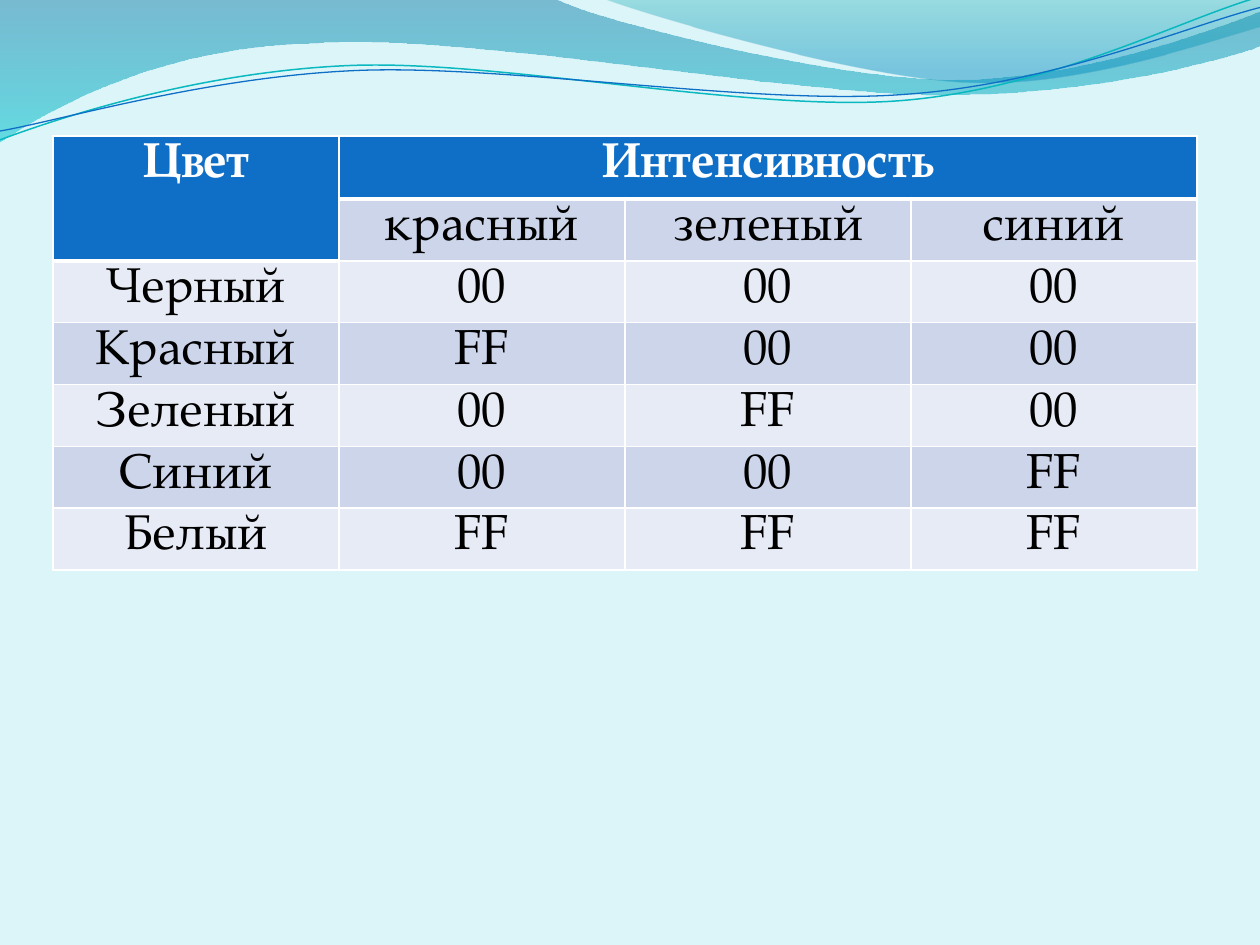
import math
from lxml import etree
from pptx import Presentation
from pptx.dml.color import RGBColor
from pptx.enum import text as t
from pptx.oxml import ns
from pptx.util import Inches, Pt

FONT = "TeX Gyre Pagella"
BLUE, WHITE, BLACK = "0F6FC6", "FFFFFF", "000000"
BANDS = ["E7EBF5", "CCD5EA"]

ROWS = [
    ["Цвет", "Интенсивность", "", ""],
    ["", "красный", "зеленый", "синий"],
    ["Черный", "00", "00", "00"],
    ["Красный", "FF", "00", "00"],
    ["Зеленый", "00", "FF", "00"],
    ["Синий", "00", "00", "FF"],
    ["Белый", "FF", "FF", "FF"],
]

# Outlines in inches: start point, then lines (2 numbers) and curves (6 numbers)
WAVE = [
    (0, 0), (4.4, -0.01),
    (4.76, 0.17, 6.64, 0.63, 7.58, 0.63), (8.53, 0.63, 9.58, 0.26, 10, 0.09),
    (10.01, 0.36),
    (9.83, 0.44, 8.7, 0.76, 7.46, 0.75), (6.22, 0.75, 3.82, 0.28, 2.57, 0.34),
    (1.29, 0.36, 0.46, 0.83, -0.01, 1.13),
]
CREST = [
    (4.79, -0.01),
    (5.09, 0.11, 6.82, 0.62, 7.69, 0.65), (8.56, 0.69, 9.61, 0.32, 10, 0.21),
    (10, 0),
]
TEAL_LINE = [
    (0, 1.11),
    (0.48, 0.93, 1.58, 0.57, 2.77, 0.52), (3.95, 0.47, 5.93, 0.89, 7.13, 0.8),
    (8.33, 0.71, 9.38, 0.15, 9.98, -0.02),
]
BLUE_LINE = [
    (0, 1.04),
    (0.47, 0.96, 1.64, 0.61, 2.83, 0.56), (4.03, 0.51, 5.97, 0.84, 7.17, 0.75),
    (8.36, 0.67, 9.41, 0.21, 10, 0.06),
]


def color(code):
    return RGBColor.from_string(code)


def turn(x, y, mid, angle):
    """Turn a point clockwise about mid by an angle in degrees."""
    a = math.radians(angle)
    dx, dy = x - mid[0], y - mid[1]
    return (mid[0] + dx * math.cos(a) - dy * math.sin(a),
            mid[1] + dx * math.sin(a) + dy * math.cos(a))


def add_curve(slide, parts, close, tilt=0, mid=(0, 0)):
    pts = [turn(*part[i:i + 2], mid, -tilt)
           for part in parts for i in range(0, len(part), 2)]
    pts = [(Inches(x), Inches(y)) for x, y in pts]
    pen = slide.shapes.build_freeform(*pts[0], scale=1.0)
    pen.add_line_segments(pts[1:], close=close)
    shape = pen.convert_to_shape()
    shape.shadow.inherit = False
    shape.rotation = tilt
    # Join each three points of a curve into one Bezier segment
    steps = iter(list(shape._element.iter(ns.qn("a:lnTo"))))
    for part in parts[1:]:
        step = next(steps)
        if len(part) == 6:
            step.tag = ns.qn("a:cubicBezTo")
            for _ in range(2):
                extra = next(steps)
                step.append(extra[0])
                extra.getparent().remove(extra)
    return shape


def add_wave(slide, parts, stops):
    shape = add_curve(slide, parts, True)
    shape.line.fill.background()
    shape.fill.gradient()
    shape.fill.gradient_angle = 270
    for stop, (place, code, _) in zip(shape.fill.gradient_stops, stops):
        stop.position = place
        stop.color.rgb = color(code)
    tints = shape._element.spPr.iter(ns.qn("a:srgbClr"))
    for tint, (_, _, alpha) in zip(tints, stops):
        etree.SubElement(tint, ns.qn("a:alpha"), val=str(alpha * 1000))


def add_line(slide, parts, code, width, mid):
    shape = add_curve(slide, parts, False, tilt=357.3, mid=mid)
    shape.fill.background()
    shape.line.color.rgb = color(code)
    shape.line.width = Pt(width)


def add_waves(slide):
    add_wave(slide, WAVE, [(0, "0074A1", 45), (1, "00C6CF", 55)])
    add_wave(slide, CREST, [(0, "00A1A9", 30), (0.8, "008BBF", 45)])
    add_line(slide, TEAL_LINE, "0AB8BF", 0.85, (4.99, 0.58))
    add_line(slide, BLUE_LINE, BLUE, 0.75, (5, 0.59))


def put_text(cell, words, size=28, code=BLACK, bold=False):
    para = cell.text_frame.paragraphs[0]
    para.alignment = t.PP_ALIGN.CENTER
    run = para.add_run()
    run.text = words
    run.font.name, run.font.size, run.font.bold = FONT, Pt(size), bold
    run.font.color.rgb = color(code)


def set_edges(cell, low):
    props = cell._tc.get_or_add_tcPr()
    for i, side in enumerate("LRTB"):
        width = low if side == "B" else 1
        edge = etree.Element(ns.qn("a:ln" + side), w=str(Pt(width)))
        fill = etree.SubElement(edge, ns.qn("a:solidFill"))
        etree.SubElement(fill, ns.qn("a:srgbClr"), val=WHITE)
        props.insert(i, edge)


def add_grid(slide, left, top, width, height):
    frame = slide.shapes.add_table(len(ROWS), len(ROWS[0]), Inches(left),
                                   Inches(top), Inches(width), Inches(height))
    table = frame.table
    for r, row in enumerate(ROWS):
        # Rows grow to fit their text
        table.rows[r].height = Inches(0.41 if r else 0.5)
        for c, words in enumerate(row):
            cell = table.cell(r, c)
            head = r == 0 or (r, c) == (1, 0)
            cell.fill.solid()
            cell.fill.fore_color.rgb = color(BLUE if head else BANDS[r % 2])
            set_edges(cell, 3 if head else 1)
            if words:
                put_text(cell, words, code=WHITE if head else BLACK, bold=head)
    table.cell(0, 0).merge(table.cell(1, 0))
    table.cell(0, 1).merge(table.cell(0, 3))
    frame.height = Inches(height)


def main():
    deck = Presentation()
    deck.slide_width, deck.slide_height = Inches(10), Inches(7.5)
    slide = deck.slides.add_slide(deck.slide_layouts[6])
    slide.background.fill.solid()
    slide.background.fill.fore_color.rgb = color("DBF5F9")
    add_waves(slide)
    add_grid(slide, 0.42, 1.08, 9.08, 3.97)
    deck.save("out.pptx")


if __name__ == "__main__":
    main()
